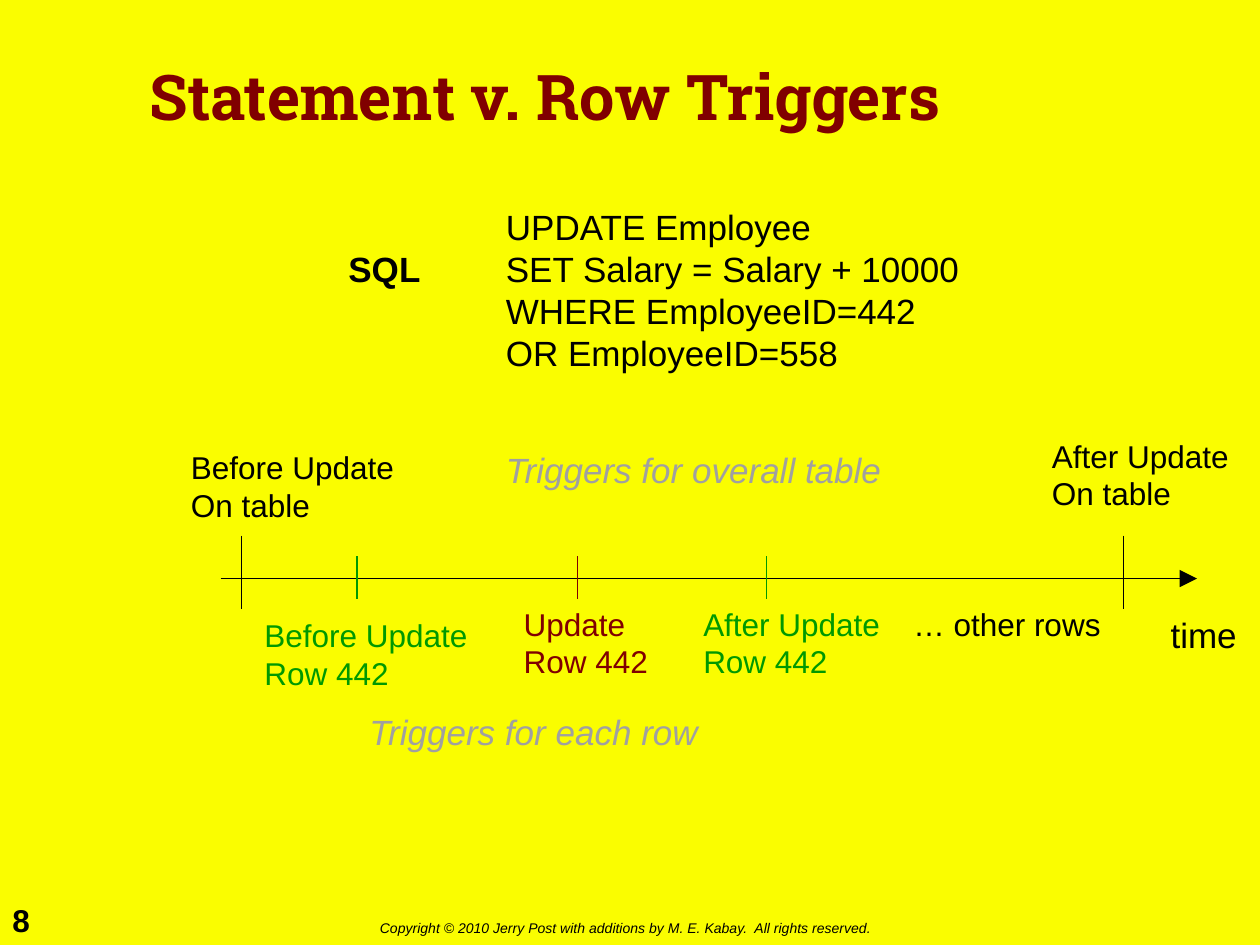
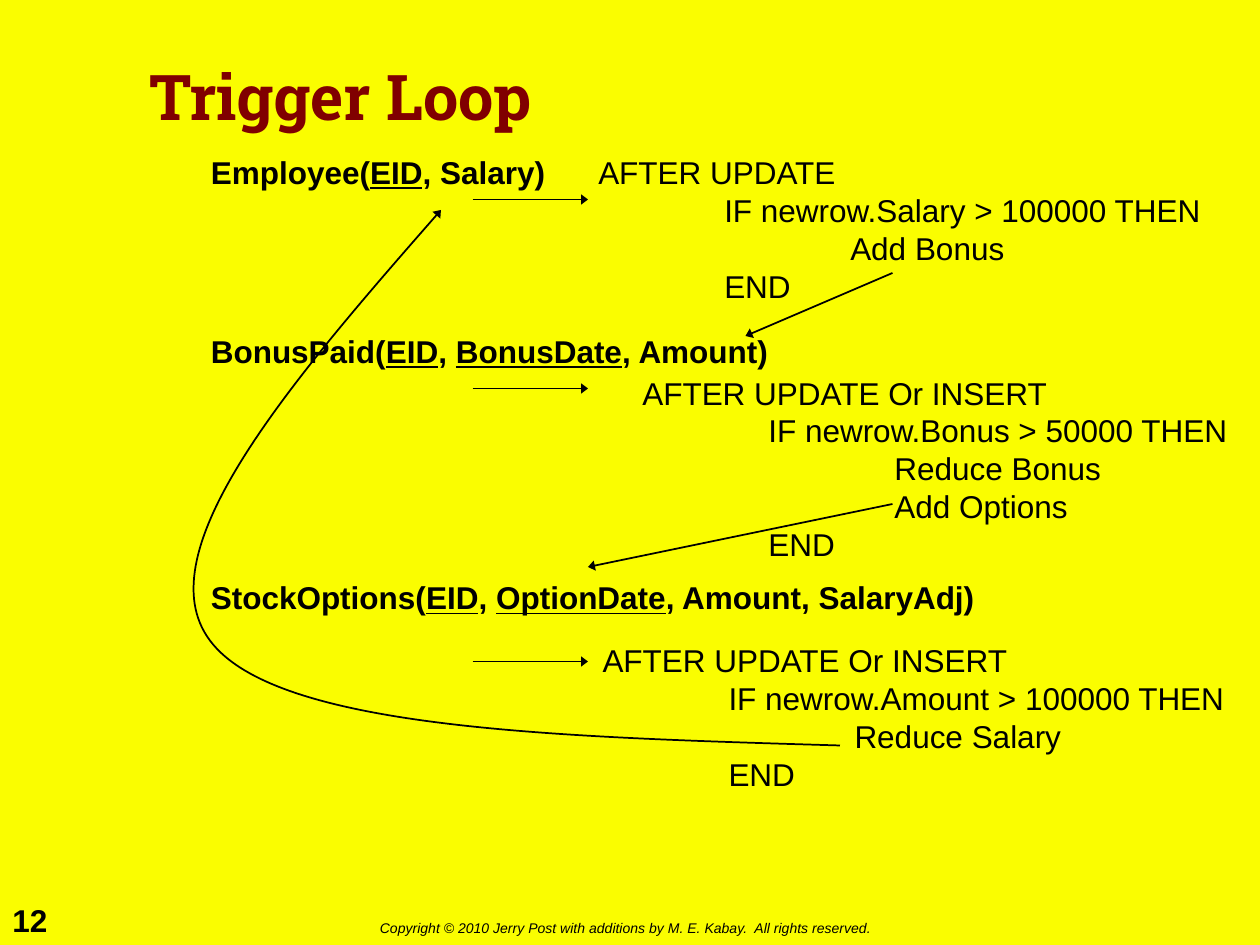
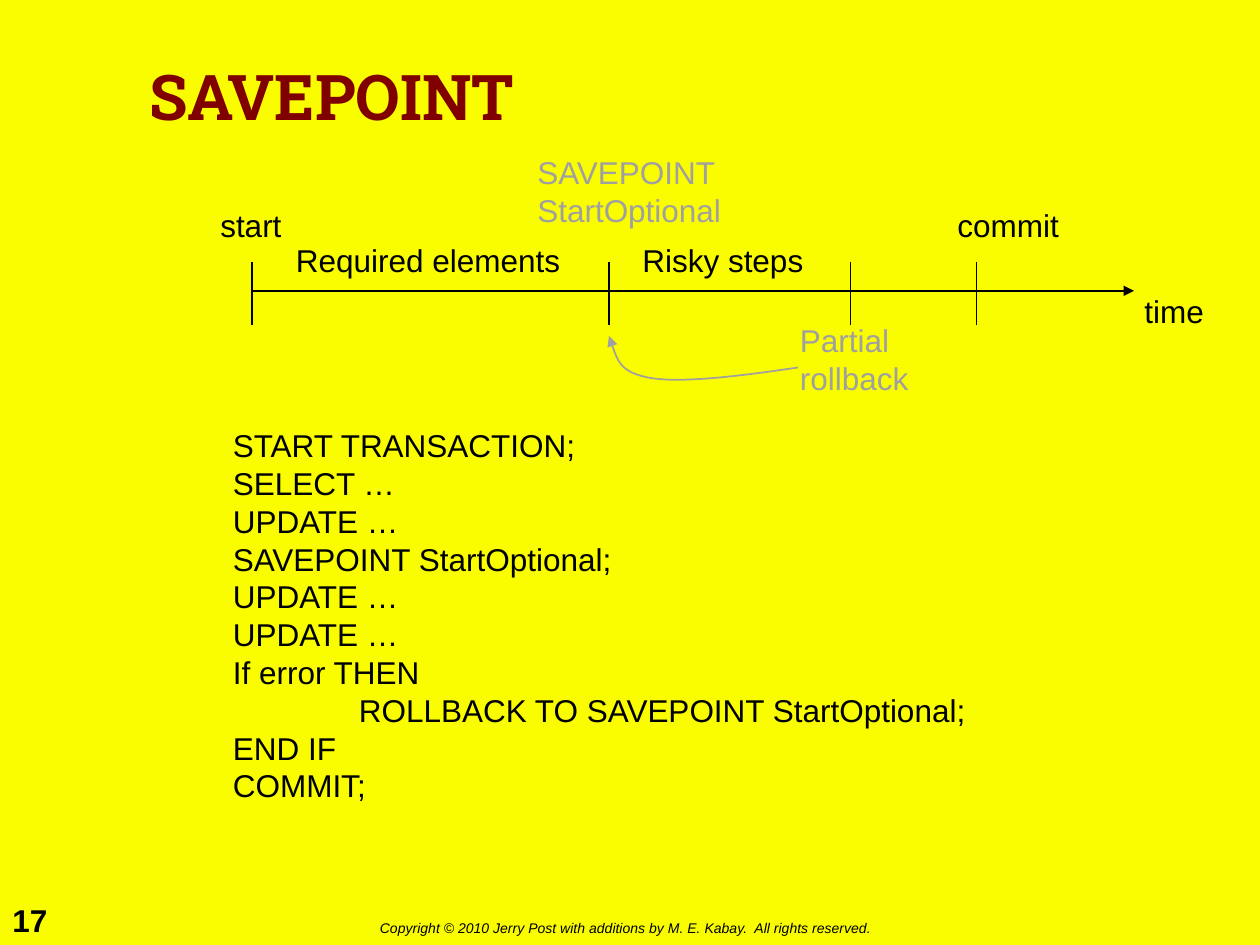
import dataclasses
import pptx
import pptx.dml.color
import pptx.enum.shapes
import pptx.enum.text
import pptx.oxml
import pptx.oxml.ns
import pptx.util
from lxml import etree

Pt = pptx.util.Pt
Color = pptx.dml.color.RGBColor.from_string
qn = pptx.oxml.ns.qn
CELL = pptx.util.Inches(1) // 12
SLACK = 0.5


@dataclasses.dataclass(frozen=True)
class Theme:
    back: str = "FAFD00"
    ink: str = "000000"
    title: str = "800000"
    row: str = "009900"
    note: str = "A0A0A0"
    face: str = "Arial"
    slab: str = "Roboto Slab"
    head: int = 36
    large: int = 20
    body: int = 18
    small: int = 8


THEME = Theme()
LARGE, MID, SHORT = ("lg", "lg"), ("med", "med"), ("med", "sm")


def cells(*counts):
    return [round(count * CELL) for count in counts]


def style(para, size, color, face=THEME.face, bold=False, slant=False):
    font = para.font
    font.size, font.name = Pt(size), face
    font.bold, font.italic = bold, slant
    font.color.rgb = Color(color)


def stroke(shape, color, tip):
    shape.line.color.rgb = Color(color)
    shape.line.width = Pt(1)
    if tip:
        line = shape._element.xpath(".//a:ln")[0]
        wide, deep = tip
        etree.SubElement(line, qn("a:tailEnd"), type="triangle", w=wide, len=deep)


class Area:
    def __init__(self, slide, col=0, row=0):
        self.shapes, self.col, self.row = slide.shapes, col, row

    def spot(self, col, row):
        return cells(self.col + col, self.row + row)

    def text(self, col, row, wide, lines, size=THEME.body, color=THEME.ink,
             bold=False, slant=False):
        high = 1.2 + len(lines) * size / 5
        box = self.shapes.add_textbox(*self.spot(col, row), *cells(wide + SLACK, high))
        frame = box.text_frame
        frame.word_wrap = True
        frame.auto_size = pptx.enum.text.MSO_AUTO_SIZE.SHAPE_TO_FIT_TEXT
        for index, line in enumerate(lines):
            para = frame.paragraphs[0] if index == 0 else frame.add_paragraph()
            depth = len(line) - len(line.lstrip("\t"))
            if depth:
                para._p.get_or_add_pPr().set("marL", str(depth * 12 * CELL))
            para.text = line.lstrip("\t")
            style(para, size, color, bold=bold, slant=slant)
        return frame

    def line(self, start, end, color=THEME.ink, tip=None):
        kind = pptx.enum.shapes.MSO_CONNECTOR.STRAIGHT
        link = self.shapes.add_connector(kind, *self.spot(*start), *self.spot(*end))
        stroke(link, color, tip)
        etree.SubElement(link._element.spPr, qn("a:effectLst"))

    def ticks(self, cols, top, base, color=THEME.ink):
        for col in cols:
            self.line((col, top), (col, base), color)

    def curve(self, points, color, tip):
        first, *rest = [self.spot(*point) for point in points]
        build = self.shapes.build_freeform(*first)
        build.add_line_segments(rest, close=False)
        shape = build.convert_to_shape()
        shape.fill.background()
        shape.shadow.inherit = False
        stroke(shape, color, tip)
        track = shape._element.xpath(".//a:path")[0]
        steps = track.findall(qn("a:lnTo"))
        for index in range(0, len(steps), 3):
            bend = etree.SubElement(track, qn("a:cubicBezTo"))
            for step in steps[index:index + 3]:
                bend.append(step[0])
                track.remove(step)


def start(deck, title, number):
    slide = deck.slides.add_slide(deck.slide_layouts.get_by_name("Title Only"))
    head = slide.shapes.title
    head.left, head.top, head.width, head.height = cells(13, 2, 94, 15)
    frame = head.text_frame
    frame.text = title
    frame.vertical_anchor = pptx.enum.text.MSO_ANCHOR.MIDDLE
    frame.auto_size = pptx.enum.text.MSO_AUTO_SIZE.NONE
    para = frame.paragraphs[0]
    para.alignment = pptx.enum.text.PP_ALIGN.LEFT
    para.line_spacing = 0.9
    style(para, THEME.head, THEME.title, THEME.slab, bold=True)
    foot = Area(slide)
    foot.text(0, 85.2, 6, [number], bold=True)
    credit = "Copyright © 2010 Jerry Post with additions by M. E. Kabay.  All rights reserved."
    foot.text(35, 87, 50.6, [credit], THEME.small, slant=True)
    return slide


def query(area):
    area.text(15, 0, 48, ["UPDATE Employee", "SET Salary = Salary + 10000",
                          "WHERE EmployeeID=442", "OR EmployeeID=558"], THEME.large)
    area.text(0, 4, 9.2, ["SQL"], THEME.large, bold=True)


def events(area):
    area.line((4, 14.1), (97, 14.1), tip=LARGE)
    area.text(93.3, 16.8, 8.8, ["time"], THEME.large)
    area.ticks([6, 90], 10, 17)
    area.ticks([17, 56], 12, 16, THEME.row)
    area.ticks([38], 12, 16, THEME.title)
    for col, row, wide, name, scope, color in [
        (0, 1.1, 21.7, "Before Update", "On table", THEME.ink),
        (82, 0, 19.2, "After Update", "On table", THEME.ink),
        (7, 17.1, 21.7, "Before Update", "Row 442", THEME.row),
        (48.8, 16, 19.2, "After Update", "Row 442", THEME.row),
        (31.7, 16, 14.3, "Update", "Row 442", THEME.title),
    ]:
        area.text(col, row, wide, [name, scope], color=color)
    area.text(68.8, 16, 20.3, ["… other rows"])
    for col, row, wide, note in [(30, 1.1, 38.3, "Triggers for overall table"),
                                 (17, 26.1, 33.8, "Triggers for each row")]:
        area.text(col, row, wide, [note], THEME.large, THEME.note, slant=True)


def table(area, wide, name, keys, rest, code, place, drop):
    para = area.text(0, 0, wide, [name + "("], bold=True).paragraphs[0]
    for index, key in enumerate(keys):
        if index:
            para.add_run().text = ", "
        run = para.add_run()
        run.text = key
        run.font.underline = True
    para.add_run().text = f", {rest})"
    area.text(*place, code)
    area.line((26.1, drop), (37.1, drop), tip=SHORT)


def loop(slide):
    insert = "AFTER UPDATE Or INSERT"
    for row, *parts in [
        (14, 34.2, "Employee", ["EID"], "Salary",
         ["AFTER UPDATE", "\tIF newrow.Salary > 100000 THEN", "\t\tAdd Bonus", "\tEND"],
         (36.9, 0, 60), 5),
        (31, 55.6, "BonusPaid", ["EID", "BonusDate"], "Amount",
         [insert, "\tIF newrow.Bonus > 50000 THEN", "\t\tReduce Bonus",
          "\t\tAdd Options", "\tEND"],
         (41.1, 4, 58.3), 6),
        (54.5, 75.2, "StockOptions", ["EID", "OptionDate"], "Amount, SalaryAdj",
         [insert, "\tIF newrow.Amount > 100000 THEN", "\t\tReduce Salary", "\tEND"],
         (37.3, 6, 61.8), 8.5),
    ]:
        table(Area(slide, 18.9, row), *parts)
    links = Area(slide)
    links.line((85, 26), (71, 32), tip=SHORT)
    links.line((85, 48), (56, 54), tip=SHORT)
    links.curve([(80, 71), (53.2, 70.2), (26.3, 69.5), (20, 61),
                 (13.7, 52.6), (27.8, 36.2), (42, 20)], THEME.ink, SHORT)


def steps(area):
    area.line((6, 13.7), (90, 13.7), tip=MID)
    area.ticks([6, 40, 63, 75], 11, 17)
    for col, row, wide, label in [
        (89.8, 13.2, 8, "time"), (1.8, 5, 8.3, "start"),
        (9, 8.4, 27.6, "Required elements"), (42, 8.4, 17.8, "Risky steps"),
        (72, 5, 12.1, "commit"),
    ]:
        area.text(col, row, wide, [label])
    area.text(32, 0, 19.9, ["SAVEPOINT", "StartOptional"], color=THEME.note)
    area.text(57, 16, 12.7, ["Partial", "rollback"], color=THEME.note)
    area.curve([(58, 21), (52.6, 21.8), (47, 22.5), (44, 22),
                (41, 21.5), (40.6, 19.7), (40, 18)], THEME.note, MID)


def script(area):
    area.text(0, 0, 78, ["START TRANSACTION;", "SELECT …", "UPDATE …",
                         "SAVEPOINT StartOptional;", "UPDATE …", "UPDATE …",
                         "If error THEN", "\tROLLBACK TO SAVEPOINT StartOptional;",
                         "END IF", "COMMIT;"])


def main():
    deck = pptx.Presentation()
    deck.slide_width, deck.slide_height = cells(120, 90)
    fill = deck.slide_master.background.fill
    fill.solid()
    fill.fore_color.rgb = Color(THEME.back)

    slide = start(deck, "Statement v. Row Triggers", "8")
    query(Area(slide, 32, 19))
    events(Area(slide, 17, 41))

    loop(start(deck, "Trigger Loop", "12"))

    slide = start(deck, "SAVEPOINT", "17")
    steps(Area(slide, 18, 14))
    script(Area(slide, 21, 40))

    deck.save("out.pptx")


if __name__ == "__main__":
    main()
